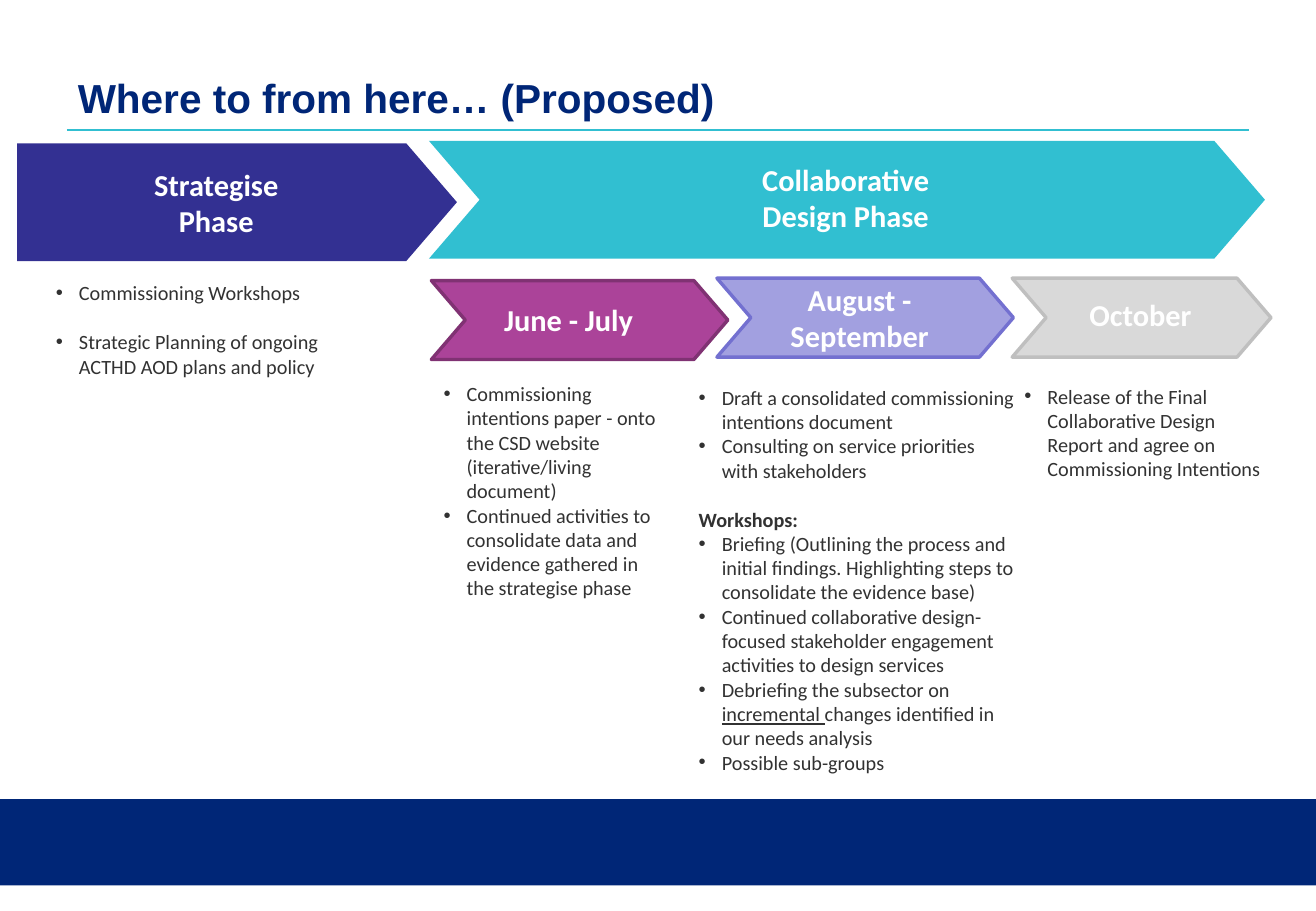
from lxml.etree import SubElement
from pptx import Presentation
from pptx.dml.color import RGBColor
from pptx.enum.shapes import MSO_CONNECTOR, MSO_SHAPE
from pptx.enum.text import MSO_ANCHOR, MSO_AUTO_SIZE, PP_ALIGN
from pptx.oxml.ns import qn
from pptx.util import Inches, Pt

COLORS = {
    "navy": "002677", "teal": "31BFD1", "indigo": "333092",
    "plum": "AB4399", "plum_edge": "803273",
    "lilac": "A2A0E0", "lilac_edge": "7370D0",
    "gray": "D9D9D9", "gray_edge": "BFBFBF",
    "ink": "323232", "white": "FFFFFF",
}

PHASES = [
    ("Strategise Phase", MSO_SHAPE.PENTAGON, (0.14, 1.18, 3.62, 0.97),
     (0.88, 1.31, 1.8, 0.71), "indigo", None),
    ("Collaborative Design Phase", MSO_SHAPE.CHEVRON, (3.53, 1.16, 6.88, 0.97),
     (6.06, 1.27, 1.8, 0.71), "teal", None),
    ("June - July", MSO_SHAPE.CHEVRON, (3.55, 2.31, 2.44, 0.65),
     (3.78, 2.43, 1.8, 0.4), "plum", "plum_edge"),
    ("August - September", MSO_SHAPE.CHEVRON, (5.9, 2.29, 2.44, 0.65),
     (6.01, 2.26, 2.13, 0.71), "lilac", "lilac_edge"),
    ("October", MSO_SHAPE.CHEVRON, (8.33, 2.29, 2.13, 0.65),
     (8.32, 2.39, 2.13, 0.4), "gray", "gray_edge"),
]

HEADS = {"Workshops:"}
GAPS = {"Workshops:", "Strategic Planning of ongoing ACTHD AOD plans and policy"}
LISTS = [
    ((0.36, 2.26, 2.8, 1.11), [
        "Commissioning Workshops",
        "Strategic Planning of ongoing ACTHD AOD plans and policy",
    ]),
    ((3.55, 3.09, 2.03, 1.92), [
        "Commissioning intentions paper - onto the CSD website (iterative/living document)",
        "Continued activities to consolidate data and evidence gathered in the strategise phase",
    ]),
    ((5.65, 3.12, 2.8, 3.74), [
        "Draft a consolidated commissioning intentions document",
        "Consulting on service priorities with stakeholders",
        "Workshops:",
        "Briefing (Outlining the process and initial findings. "
        "Highlighting steps to consolidate the evidence base)",
        "Continued collaborative design-focused stakeholder engagement "
        "activities to design services",
        "Debriefing the subsector on |incremental |changes identified in our needs analysis",
        "Possible sub-groups",
    ]),
    ((8.33, 3.11, 2.18, 1.19), [
        "Release of the Final Collaborative Design Report and agree on Commissioning Intentions",
    ]),
]


def tint(name):
    """Return the named colour."""
    return RGBColor.from_string(COLORS[name])


def place(shape, box):
    """Move a shape to a box given in inches."""
    shape.left, shape.top, shape.width, shape.height = map(Inches, box)


def style(font, size, color, bold=False, face="Calibri"):
    """Set the look of a font."""
    font.name, font.size, font.bold = face, Pt(size), bold
    font.color.rgb = tint(color)


def set_frame(frame, anchor):
    """Make a text frame wrap at a fixed size."""
    frame.word_wrap = True
    frame.auto_size = MSO_AUTO_SIZE.NONE
    frame.vertical_anchor = anchor


def add_block(slide, kind, box, fill, edge=None):
    """Add a filled shape with an optional outline."""
    shape = slide.shapes.add_shape(kind, *map(Inches, box))
    shape.shadow.inherit = False
    shape.fill.solid()
    shape.fill.fore_color.rgb = tint(fill)
    if edge:
        shape.line.color.rgb = tint(edge)
        shape.line.width = Pt(2)
    else:
        shape.line.fill.background()
    return shape


def add_title(slide, box):
    """Fill the title and draw the rule below it."""
    title = slide.shapes.title
    place(title, box)
    set_frame(title.text_frame, MSO_ANCHOR.BOTTOM)
    title.text_frame.text = "Where to from here… (Proposed)"
    para = title.text_frame.paragraphs[0]
    para.alignment = PP_ALIGN.LEFT
    style(para.font, 24, "navy", True, "Arial")
    left, top, width, height = box
    y = Inches(top + height + 0.02)
    rule = slide.shapes.add_connector(
        MSO_CONNECTOR.STRAIGHT, Inches(left + 0.01), y, Inches(left + width - 0.01), y)
    rule.line.color.rgb = tint("teal")
    rule.line.width = Pt(1)
    SubElement(rule._element.spPr, qn("a:effectLst"))


def add_phase(slide, text, kind, box, label, fill, edge):
    """Add a phase arrow with its label."""
    arrow = add_block(slide, kind, box, fill, edge)
    arrow.adjustments[0] = 0.43
    frame = slide.shapes.add_textbox(*map(Inches, label)).text_frame
    set_frame(frame, MSO_ANCHOR.MIDDLE)
    frame.text = text
    para = frame.paragraphs[0]
    para.alignment = PP_ALIGN.CENTER
    style(para.font, 18, "white", True)


def set_bullet(para, shown):
    """Turn the bullet of a paragraph on or off."""
    props = para._p.get_or_add_pPr()
    indent = Inches(0.19) if shown else 0
    props.set("marL", str(indent))
    props.set("indent", str(-indent))
    if shown:
        SubElement(props, qn("a:buFont"), typeface="Arial")
        SubElement(props, qn("a:buChar"), char="•")
    else:
        SubElement(props, qn("a:buNone"))


def add_list(body, box, items):
    """Fill a body placeholder, underlining the parts between bars."""
    place(body, box)
    frame = body.text_frame
    set_frame(frame, MSO_ANCHOR.TOP)
    for i, item in enumerate(items):
        para = frame.add_paragraph() if i else frame.paragraphs[0]
        head = item in HEADS
        set_bullet(para, not head)
        para.space_before = Pt(14.6 if item in GAPS else 0)
        style(para.font, 12, "ink", head)
        for j, part in enumerate(item.split("|")):
            run = para.add_run()
            run.text = part
            if j % 2:
                run.font.underline = True


def main():
    """Build and save the slide."""
    deck = Presentation()
    deck.slide_width, deck.slide_height = Inches(10.83), Inches(7.5)
    slide = deck.slides.add_slide(deck.slide_layouts.get_by_name("Comparison"))
    add_block(slide, MSO_SHAPE.RECTANGLE, (0, 6.58, 10.83, 0.71), "navy")
    add_title(slide, (0.54, 0.28, 9.75, 0.77))
    for phase in PHASES:
        add_phase(slide, *phase)
    bodies = list(slide.placeholders)[1:]
    for body, (box, items) in zip(bodies, LISTS):
        add_list(body, box, items)
    deck.save("out.pptx")


if __name__ == "__main__":
    main()
